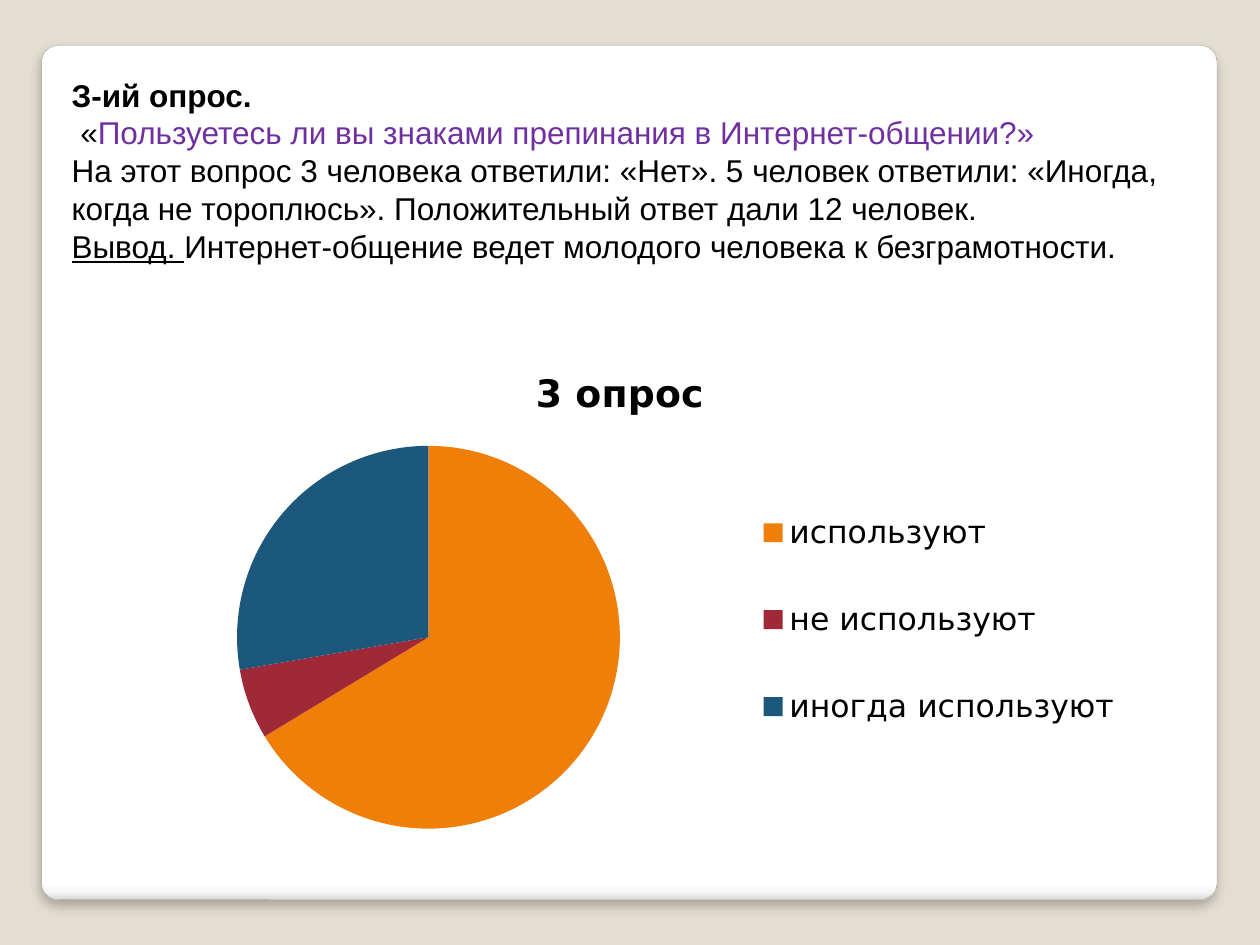
import pptx
import pptx.chart.data
import pptx.dml.color
import pptx.enum.chart
import pptx.enum.shapes
import pptx.oxml
import pptx.oxml.ns
import pptx.util
from pptx.util import Inches

TEXT_FONT = "Arial"
CHART_FONT = "DejaVu Sans"
BLACK, PURPLE = "000000", "7030A0"
DRAWING_NS = pptx.oxml.ns.nsdecls("a")
CHART_NS = pptx.oxml.ns.nsdecls("c")

# Each paragraph is a list of spans: text, colour, bold, underline
PARAGRAPHS = [
    [("З-ий опрос.", BLACK, True, False)],
    [(" «", BLACK, False, False),
     ("Пользуетесь ли вы знаками препинания в Интернет-общении?»", PURPLE, False, False)],
    [("На этот вопрос 3 человека ответили: «Нет». 5 человек ответили: «Иногда, "
      "когда не тороплюсь». Положительный ответ дали 12 человек.", BLACK, False, False)],
    [("Вывод. ", BLACK, False, True),
     ("Интернет-общение ведет молодого человека к безграмотности.", BLACK, False, False)],
]
# Answer, share in percent, slice colour
ANSWERS = [
    ("используют", 67, "F07F09"),
    ("не используют", 6, "9F2936"),
    ("иногда используют", 28, "1B587C"),
]


def color(code):
    return pptx.dml.color.RGBColor.from_string(code)


def add_panel(page, box):
    """Rounded white panel with a grey lower edge and a soft shadow."""
    panel = page.shapes.add_shape(pptx.enum.shapes.MSO_SHAPE.ROUNDED_RECTANGLE, *box)
    panel.adjustments[0] = 0.02
    panel.line.color.rgb = color("A4A4A4")
    panel.line.width = pptx.util.Pt(0.16)
    stops = "".join(
        f'<a:gs pos="{position * 1000}"><a:srgbClr val="{code}"/></a:gs>'
        for position, code in [(0, "FFFFFF"), (98, "FFFFFF"), (99, "F7F7F7"), (100, "DADADA")])
    properties = panel.element.spPr
    properties.find(pptx.oxml.ns.qn("a:ln")).addprevious(pptx.oxml.parse_xml(
        f'<a:gradFill {DRAWING_NS}><a:gsLst>{stops}</a:gsLst>'
        '<a:lin ang="5400000" scaled="0"/></a:gradFill>'))
    properties.append(pptx.oxml.parse_xml(
        f'<a:effectLst {DRAWING_NS}><a:outerShdw blurRad="{pptx.util.Pt(6)}" '
        f'dist="{pptx.util.Pt(4)}" dir="5400000" rotWithShape="0">'
        '<a:srgbClr val="000000"><a:alpha val="25000"/></a:srgbClr>'
        '</a:outerShdw></a:effectLst>'))


def add_survey_text(page, box):
    """Question, answers and conclusion of the survey."""
    frame = page.shapes.add_textbox(*box).text_frame
    frame.word_wrap = True
    for index, spans in enumerate(PARAGRAPHS):
        para = frame.paragraphs[0] if index == 0 else frame.add_paragraph()
        para.font.name = TEXT_FONT
        para.font.size = pptx.util.Pt(18)
        for text, code, bold, underline in spans:
            span = para.add_run()
            span.text = text
            span.font.name = TEXT_FONT
            span.font.size = pptx.util.Pt(18)
            span.font.color.rgb = color(code)
            span.font.bold = bold
            span.font.underline = underline


def layout_xml(left, top, width, height, target=""):
    """Manual chart layout, in fractions of the chart's box."""
    values = zip("xywh", (left, top, width, height))
    return pptx.oxml.parse_xml(
        f'<c:layout {CHART_NS}><c:manualLayout>{target}'
        '<c:xMode val="edge"/><c:yMode val="edge"/>'
        + "".join(f'<c:{name} val="{value}"/>' for name, value in values)
        + '</c:manualLayout></c:layout>')


def add_answer_chart(page, box):
    """Pie of the answers with a legend on the right."""
    data = pptx.chart.data.CategoryChartData()
    data.categories = [answer for answer, _, _ in ANSWERS]
    data.add_series("3 опрос", [share for _, share, _ in ANSWERS])
    chart = page.shapes.add_chart(pptx.enum.chart.XL_CHART_TYPE.PIE, *box, data).chart
    chart.font.name = CHART_FONT
    chart.font.size = pptx.util.Pt(18)
    chart.font.color.rgb = color(BLACK)

    # Title
    chart.has_title = True
    chart.chart_title.text_frame.text = "3 опрос"
    title_font = chart.chart_title.text_frame.paragraphs[0].font
    title_font.name = CHART_FONT
    title_font.size = pptx.util.Pt(21.6)
    title_font.bold = True
    title_font.color.rgb = color(BLACK)

    # Slices
    plot = chart.plots[0]
    plot.vary_by_categories = True
    for index, (_, _, code) in enumerate(ANSWERS):
        fill = plot.series[0].points[index].format.fill
        fill.solid()
        fill.fore_color.rgb = color(code)
    plot_area = chart.element.chart.plotArea
    for old_layout in plot_area.findall(pptx.oxml.ns.qn("c:layout")):
        plot_area.remove(old_layout)
    plot_area.insert(0, layout_xml(0.14, 0.2, 0.36, 0.77, '<c:layoutTarget val="inner"/>'))

    # Legend
    chart.has_legend = True
    legend = chart.legend
    legend.position = pptx.enum.chart.XL_LEGEND_POSITION.RIGHT
    legend.include_in_layout = False
    legend_element = legend._element
    for old_layout in legend_element.findall(pptx.oxml.ns.qn("c:layout")):
        legend_element.remove(old_layout)
    legend_element.find(pptx.oxml.ns.qn("c:legendPos")).addnext(
        layout_xml(0.62, 0.24, 0.36, 0.62))


def main():
    deck = pptx.Presentation()
    deck.slide_width, deck.slide_height = Inches(10), Inches(7.5)
    page = deck.slides.add_slide(deck.slide_layouts[6])
    page.background.fill.solid()
    page.background.fill.fore_color.rgb = color("E3DED1")
    add_panel(page, (Inches(0.33), Inches(0.36), Inches(9.33), Inches(6.78)))
    add_survey_text(page, (Inches(0.47), Inches(0.55), Inches(9.14), Inches(1.62)))
    add_answer_chart(page, (Inches(0.7), Inches(2.73), Inches(8.44), Inches(3.98)))
    deck.save("out.pptx")


if __name__ == "__main__":
    main()
